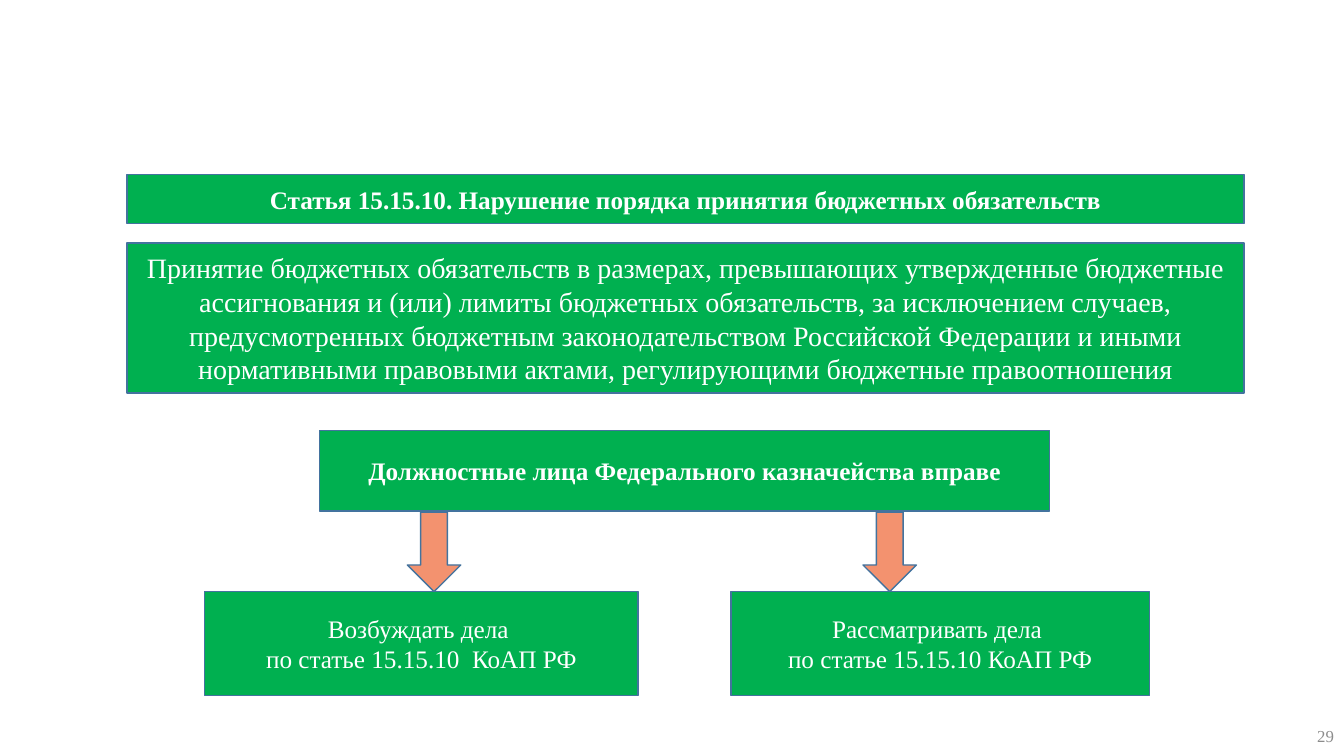
from pptx import Presentation
from pptx.dml.color import RGBColor
from pptx.enum.shapes import MSO_SHAPE
from pptx.enum.text import MSO_ANCHOR, MSO_AUTO_SIZE, PP_ALIGN
from pptx.util import Inches, Pt

GREEN = RGBColor(0x00, 0xB0, 0x50)
ORANGE = RGBColor(0xF3, 0x92, 0x6F)
BLUE = RGBColor(0x43, 0x73, 0x9E)
WHITE = RGBColor(0xFF, 0xFF, 0xFF)
GRAY = RGBColor(0x8C, 0x8C, 0x8C)


def paint(shape, color):
    shape.fill.solid()
    shape.fill.fore_color.rgb = color
    shape.line.color.rgb = BLUE
    shape.line.width = Pt(1)


def write(shape, text, size, bold=False, color=WHITE, align=PP_ALIGN.CENTER):
    frame = shape.text_frame
    frame.text = text
    frame.word_wrap = True
    frame.auto_size = MSO_AUTO_SIZE.NONE
    frame.vertical_anchor = MSO_ANCHOR.MIDDLE
    for para in frame.paragraphs:
        para.alignment = align
        para.line_spacing = 1.0
        for span in para.runs:
            span.font.name = "Times New Roman"
            span.font.size = Pt(size)
            span.font.bold = bold
            span.font.color.rgb = color


deck = Presentation()
deck.slide_width = Inches(13.33)
deck.slide_height = Inches(7.5)
page = deck.slides.add_slide(deck.slide_layouts[5])

title = page.shapes.title
title.left, title.top = Inches(1.26), Inches(1.73)
title.width, title.height = Inches(11.08), Inches(0.49)
paint(title, GREEN)
write(title, "Статья 15.15.10. Нарушение порядка принятия бюджетных обязательств", 18, True)

boxes = [
    (1.26, 2.41, 11.08, 1.49, 20, False,
     "Принятие бюджетных обязательств в размерах, превышающих утвержденные "
     "бюджетные ассигнования и (или) лимиты бюджетных обязательств, за исключением "
     "случаев, предусмотренных бюджетным законодательством Российской Федерации и "
     "иными нормативными правовыми актами, регулирующими бюджетные правоотношения"),
    (3.17, 4.27, 7.24, 0.8, 18, True,
     "Должностные лица Федерального казначейства вправе"),
    (2.03, 5.87, 4.3, 1.03, 18, False,
     "Возбуждать дела \nпо статье 15.15.10  КоАП РФ"),
    (7.25, 5.87, 4.15, 1.03, 18, False,
     "Рассматривать дела \nпо статье 15.15.10 КоАП РФ"),
]
for left, top, width, height, size, bold, text in boxes:
    box = page.shapes.add_shape(
        MSO_SHAPE.RECTANGLE, Inches(left), Inches(top), Inches(width), Inches(height))
    box.shadow.inherit = False
    paint(box, GREEN)
    write(box, text, size, bold)

for left in (4.04, 8.56):
    arrow = page.shapes.add_shape(
        MSO_SHAPE.DOWN_ARROW, Inches(left), Inches(5.08), Inches(0.53), Inches(0.79))
    arrow.shadow.inherit = False
    paint(arrow, ORANGE)

number = page.shapes.add_textbox(Inches(10.33), Inches(7.1), Inches(3), Inches(0.4))
write(number, "29", 12, color=GRAY, align=PP_ALIGN.RIGHT)

deck.save("out.pptx")
